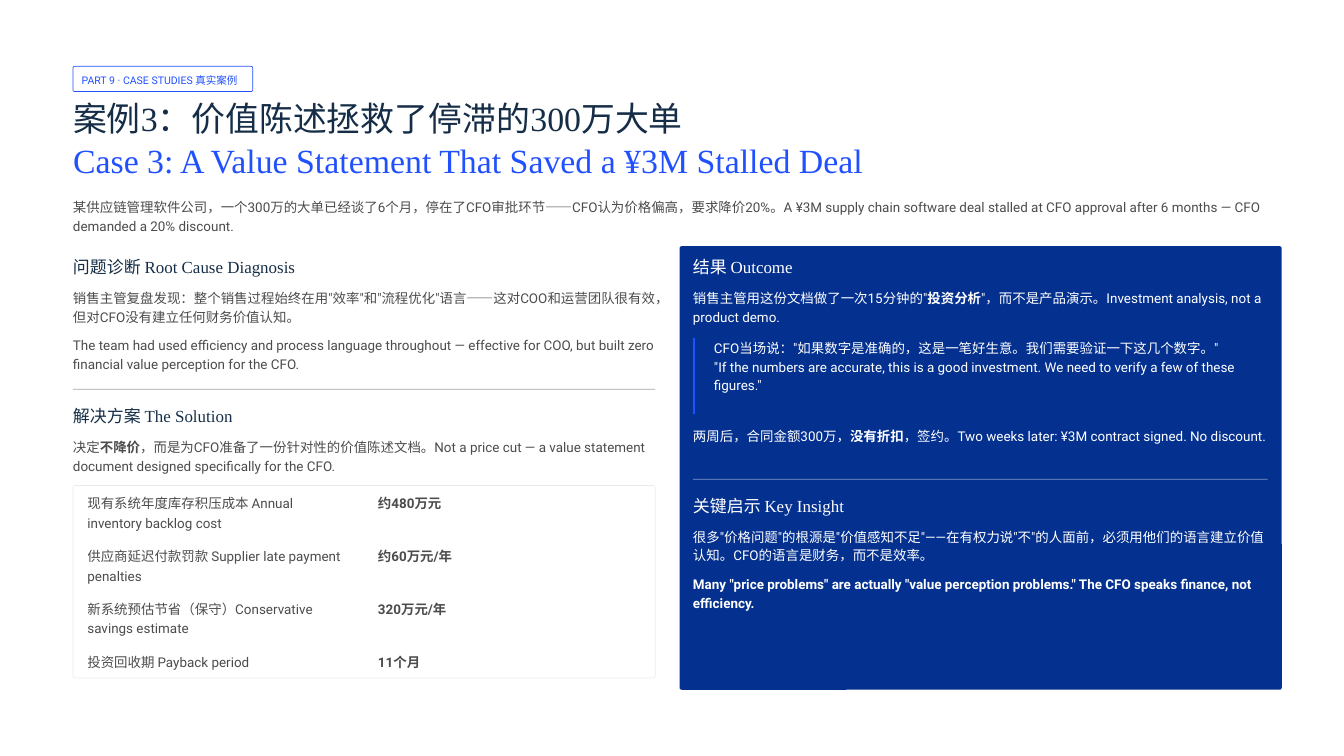
from pptx import Presentation
from pptx.dml.color import RGBColor as RGB
from pptx.enum.shapes import MSO_CONNECTOR as CONN, MSO_SHAPE as SHAPE
from pptx.util import Pt
from pptx.oxml.ns import qn
from lxml.etree import SubElement

COLORS = {"blue": "2150FE", "navy": "152D47", "gray": "4C4C4D",
          "panel": "04318F", "white": "FFFFFF", "black": "000000"}
STYLES = {
    "tag": {"font": {"name": "Roboto", "size": Pt(9)}, "line": 13},
    "title": {"font": {"name": "Times New Roman", "size": Pt(29)}, "line": 36.5},
    "heading": {"font": {"name": "Times New Roman", "size": Pt(14.5)}, "line": 18},
    "body": {"font": {"name": "Roboto", "size": Pt(11.5)}, "line": 16},
}

TAG = "PART 9 · CASE STUDIES 真实案例"
TITLE = [("案例3：价值陈述拯救了停滞的300万大单", "navy"),
         ("Case 3: A Value Statement That Saved a ¥3M Stalled Deal", "blue")]
INTRO = "某供应链管理软件公司，一个300万的大单已经谈了6个月，停在了CFO审批环节——CFO认为价格偏高，要求降价20%。A ¥3M supply chain software deal stalled at CFO approval after 6 months — CFO demanded a 20% discount."
LEFT, LEFT_W = 62.6, 499
RIGHT, RIGHT_W = 594, 492.5
HEAD_GAP, PARA_GAP = 27.1, 40.4
SECTIONS = [
    (LEFT, 219.6, LEFT_W, "navy", "gray", "问题诊断 Root Cause Diagnosis", [
        '销售主管复盘发现：整个销售过程始终在用"效率"和"流程优化"语言——这对COO和运营团队很有效，但对CFO没有建立任何财务价值认知。',
        "The team had used efficiency and process language throughout — effective for COO, but built zero financial value perception for the CFO."]),
    (LEFT, 347, LEFT_W, "navy", "gray", "解决方案 The Solution", [
        "决定**不降价**，而是为CFO准备了一份针对性的价值陈述文档。Not a price cut — a value statement document designed specifically for the CFO."]),
    (RIGHT, 219.6, RIGHT_W, "white", "white", "结果 Outcome", [
        '销售主管用这份文档做了一次15分钟的"**投资分析**"，而不是产品演示。Investment analysis, not a product demo.']),
    (RIGHT, 424.1, RIGHT_W, "white", "white", "关键启示 Key Insight", [
        '很多"价格问题"的根源是"价值感知不足"——在有权力说"不"的人面前，必须用他们的语言建立价值认知。CFO的语言是财务，而不是效率。',
        '**Many "price problems" are actually "value perception problems." The CFO speaks finance, not efficiency.**']),
]
QUOTE = ['CFO当场说："如果数字是准确的，这是一笔好生意。我们需要验证一下这几个数字。"',
         '"If the numbers are accurate, this is a good investment. We need to verify a few of these figures."']
CLOSING = "两周后，合同金额300万，**没有折扣**，签约。Two weeks later: ¥3M contract signed. No discount."
FIGURES = [
    ("现有系统年度库存积压成本 Annual inventory backlog cost", "**约480万元**"),
    ("供应商延迟付款罚款 Supplier late payment penalties", "**约60万元/年**"),
    ("新系统预估节省（保守）Conservative savings estimate", "**320万元/年**"),
    ("投资回收期 Payback period", "**11个月**"),
]


def paint(fill, color, alpha=100):
    fill.solid()
    fill.fore_color.rgb = RGB.from_string(COLORS[color])
    if alpha < 100:
        clr = fill._xPr.find(".//" + qn("a:srgbClr"))
        SubElement(clr, qn("a:alpha"), val=str(alpha * 1000))


def write(tf, paragraphs, style):
    look = STYLES[style]
    tf.word_wrap = True
    for side in ("left", "top", "right", "bottom"):
        setattr(tf, f"margin_{side}", 0)
    for i, (text, color) in enumerate(paragraphs):
        p = tf.paragraphs[0] if i == 0 else tf.add_paragraph()
        p.line_spacing = Pt(look["line"])
        for j, part in enumerate(text.split("**")):
            if not part:
                continue
            r = p.add_run()
            r.text = part
            for key, value in look["font"].items():
                setattr(r.font, key, value)
            r.font.bold = j % 2 == 1
            r.font.color.rgb = RGB.from_string(COLORS[color])


def text_box(x, y, w, h, paragraphs, style="body"):
    box = s.shapes.add_textbox(Pt(x), Pt(y), Pt(w), Pt(h))
    write(box.text_frame, paragraphs, style)


def panel(x, y, w, h, radius, fill=None, line=None, alpha=100):
    sp = s.shapes.add_shape(SHAPE.ROUNDED_RECTANGLE, Pt(x), Pt(y), Pt(w), Pt(h))
    sp.shadow.inherit = False
    sp.adjustments[0] = radius
    if fill:
        paint(sp.fill, fill)
    else:
        sp.fill.background()
    if line:
        sp.line.width = Pt(0.6)
        paint(sp.line.fill, line, alpha)
    else:
        sp.line.fill.background()


def rule(x1, y1, x2, y2, width, color, alpha=100):
    c = s.shapes.add_connector(CONN.STRAIGHT, Pt(x1), Pt(y1), Pt(x2), Pt(y2))
    c.line.width = Pt(width)
    paint(c.line.fill, color, alpha)
    SubElement(c._element.spPr, qn("a:effectLst"))


def figures_table(x, y, widths, heights):
    frame = s.shapes.add_table(len(FIGURES), 2, Pt(x), Pt(y), Pt(sum(widths)), Pt(sum(heights)))
    table = frame.table
    table.first_row = table.horz_banding = False
    for column, width in zip(table.columns, widths):
        column.width = Pt(width)
    for row, height, texts in zip(table.rows, heights, FIGURES):
        row.height = Pt(height)
        for cell, text in zip(row.cells, texts):
            cell.fill.background()
            write(cell.text_frame, [(text, "gray")], "body")
            cell.margin_left = cell.margin_top = cell.margin_bottom = 0
            cell.margin_right = Pt(23.8)


prs = Presentation()
prs.slide_width, prs.slide_height = Pt(1152), Pt(648)
s = prs.slides.add_slide(prs.slide_layouts[6])
paint(s.background.fill, "white")

panel(LEFT, 56.9, 154.1, 21.6, 0.066, line="blue")
text_box(70, 61.2, 145, 13, [(TAG, "blue")], "tag")
text_box(LEFT, 81.6, 680.4, 73.4, TITLE, "title")
text_box(LEFT, 168.5, 1026.7, 33.1, [(INTRO, "gray")])

panel(582.5, 211, 516.2, 380.2, 0.005, fill="panel")
for x, y, w, head_color, body_color, heading, paragraphs in SECTIONS:
    text_box(x, y, w, 18, [(heading, head_color)], "heading")
    for i, text in enumerate(paragraphs):
        text_box(x, y + HEAD_GAP + i * PARA_GAP, w, 33.1, [(text, body_color)])

rule(LEFT, 333.7, LEFT + LEFT_W, 333.7, 0.6, "gray", 50)
panel(LEFT, 416.2, LEFT_W, 164.9, 0.011, line="black", alpha=8)
figures_table(74.9, 423.6, [249.1, 225.4], [45.2] * 3 + [16.6])

rule(RIGHT + 0.8, 289.4, RIGHT + 0.8, 355, 1.5, "blue")
text_box(RIGHT + 18, 289.4, 475.2, 65.5, [(text, "white") for text in QUOTE])
text_box(RIGHT, 365, RIGHT_W, 33.1, [(CLOSING, "white")])
rule(RIGHT, 410.8, RIGHT + RIGHT_W, 410.8, 0.6, "white", 50)

prs.save("out.pptx")
